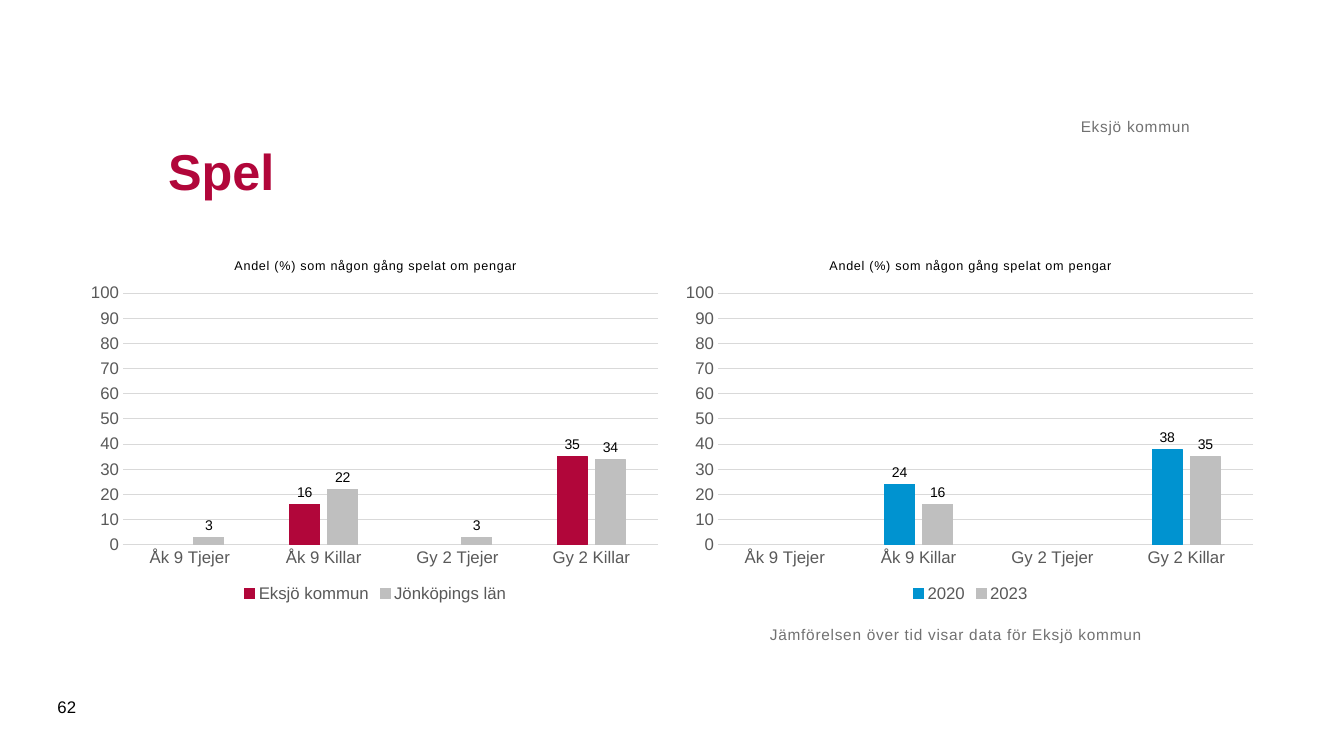
from dataclasses import dataclass

import lxml.etree
import pptx
import pptx.chart.data
import pptx.dml.color
import pptx.enum.chart
import pptx.enum.text
import pptx.oxml
import pptx.oxml.ns
import pptx.util

Pt = pptx.util.Pt
RGB = pptx.dml.color.RGBColor
Align = pptx.enum.text.PP_ALIGN
Anchor = pptx.enum.text.MSO_ANCHOR
Tick = pptx.enum.chart.XL_TICK_MARK

RED = RGB(0xB1, 0x06, 0x3A)
BLUE = RGB(0x00, 0x93, 0xD0)
SILVER = RGB(0xBF, 0xBF, 0xBF)
GRID = RGB(0xD9, 0xD9, 0xD9)
DARK = RGB(0x59, 0x59, 0x59)
GREY = RGB(0x71, 0x71, 0x71)
BLACK = RGB(0x00, 0x00, 0x00)

FONT = "Arial"
FORMAT = "#,##0;#,##0"
GROUPS = ["Åk 9 Tjejer", "Åk 9 Killar", "Gy 2 Tjejer", "Gy 2 Killar"]
HEADING = "Andel (%) som någon gång spelat om pengar"
PLOT = {"x": 0.073, "y": 0.14, "w": 0.905, "h": 0.69}


@dataclass
class Bars:
    name: str
    values: list[int | None]
    color: RGB


@dataclass
class Panel:
    left: float
    bars: list[Bars]


@dataclass
class Label:
    text: str
    box: tuple[float, float, float, float]
    size: float
    color: RGB
    bold: bool = False
    align: Align = Align.LEFT
    anchor: Anchor = Anchor.MIDDLE
    inset: tuple[float, float] = (7.2, 3.6)
    space: int = 0


PANELS = [
    Panel(57, [Bars("Eksjö kommun", [None, 16, None, 35], RED),
               Bars("Jönköpings län", [3, 22, 3, 34], SILVER)]),
    Panel(482, [Bars("2020", [None, 24, None, 38], BLUE),
                Bars("2023", [None, 16, None, 35], SILVER)]),
]

LABELS = [
    Label("Spel", (113, 70.5, 737, 102), 36, RED, bold=True),
    Label("Jämförelsen över tid visar data för Eksjö kommun",
          (550, 446.5, 382, 68), 11, GREY,
          anchor=Anchor.TOP, inset=(0, 0), space=50),
    Label("Eksjö kommun", (113, 44.5, 737, 52.5), 11, GREY,
          align=Align.RIGHT, anchor=Anchor.BOTTOM, inset=(0, 0), space=50),
    Label("62", (34, 490.5, 41, 29), 12, BLACK),
]


def assign(target, values: dict) -> None:
    for name, value in values.items():
        setattr(target, name, value)


def style(font, size: float, color: RGB, bold: bool = False) -> None:
    assign(font, {"name": FONT, "size": Pt(size), "bold": bold})
    font.color.rgb = color


def write(part, text: str, size: float, color: RGB,
          bold: bool = False, space: int = 0) -> None:
    """Add a run; space is the letter gap in hundredths of a point."""
    run = part.add_run()
    run.text = text
    style(run.font, size, color, bold)
    if space:
        run._r.get_or_add_rPr().set("spc", str(space))


def add_label(slide, label: Label) -> None:
    frame = slide.shapes.add_textbox(*map(Pt, label.box)).text_frame
    side, edge = map(Pt, label.inset)
    assign(frame, {
        "word_wrap": True, "vertical_anchor": label.anchor,
        "margin_left": side, "margin_right": side,
        "margin_top": edge, "margin_bottom": edge,
    })
    part = frame.paragraphs[0]
    part.alignment = label.align
    write(part, label.text, label.size, label.color, label.bold, label.space)


def place_plot(chart) -> None:
    """Fix the inner plot area as shares of the chart frame."""
    qn = pptx.oxml.ns.qn
    area = chart._chartSpace.find(".//" + qn("c:plotArea"))
    for old in area.findall(qn("c:layout")):
        area.remove(old)
    layout = lxml.etree.Element(qn("c:layout"))
    manual = lxml.etree.SubElement(layout, qn("c:manualLayout"))
    values = {"layoutTarget": "inner", "xMode": "edge", "yMode": "edge", **PLOT}
    for name, value in values.items():
        lxml.etree.SubElement(manual, qn("c:" + name)).set("val", str(value))
    area.insert(0, layout)


def style_axes(chart) -> None:
    for axis in (chart.category_axis, chart.value_axis):
        assign(axis, {"major_tick_mark": Tick.NONE, "minor_tick_mark": Tick.NONE})
        style(axis.tick_labels.font, 12, DARK)
    scale = chart.value_axis
    assign(scale, {"minimum_scale": 0, "maximum_scale": 100, "major_unit": 10,
                   "has_major_gridlines": True})
    assign(scale.tick_labels, {"number_format": FORMAT,
                               "number_format_is_linked": False})
    scale.format.line.fill.background()
    for line in (chart.category_axis.format.line, scale.major_gridlines.format.line):
        line.color.rgb = GRID
        line.width = Pt(0.75)


def style_bars(series, color: RGB) -> None:
    series.format.fill.solid()
    series.format.fill.fore_color.rgb = color
    series.format.line.color.rgb = color
    series.format.line.width = Pt(0.75)
    series.invert_if_negative = False
    assign(series.data_labels, {
        "show_value": True, "number_format": FORMAT,
        "number_format_is_linked": False,
        "position": pptx.enum.chart.XL_LABEL_POSITION.OUTSIDE_END,
    })
    style(series.data_labels.font, 10, BLACK)


def add_panel(slide, panel: Panel) -> None:
    data = pptx.chart.data.CategoryChartData(number_format=FORMAT)
    data.categories = GROUPS
    for bars in panel.bars:
        data.add_series(bars.name, bars.values)
    chart = slide.shapes.add_chart(
        pptx.enum.chart.XL_CHART_TYPE.COLUMN_CLUSTERED,
        Pt(panel.left), Pt(173), Pt(422.5), Pt(260.5), data).chart
    style(chart.font, 10, BLACK)
    write(chart.chart_title.text_frame.paragraphs[0], HEADING, 9, BLACK, space=50)
    chart.has_legend = True
    assign(chart.legend, {"include_in_layout": False,
                          "position": pptx.enum.chart.XL_LEGEND_POSITION.BOTTOM})
    style(chart.legend.font, 12, DARK)
    style_axes(chart)
    plot = chart.plots[0]
    assign(plot, {"gap_width": 219, "overlap": -27, "vary_by_categories": False})
    for series, bars in zip(plot.series, panel.bars):
        style_bars(series, bars.color)
    place_plot(chart)


def main() -> None:
    deck = pptx.Presentation()
    assign(deck, {"slide_width": Pt(960), "slide_height": Pt(540)})
    slide = deck.slides.add_slide(deck.slide_layouts[6])
    for panel in PANELS:
        add_panel(slide, panel)
    for label in LABELS:
        add_label(slide, label)
    deck.save("out.pptx")


if __name__ == "__main__":
    main()
